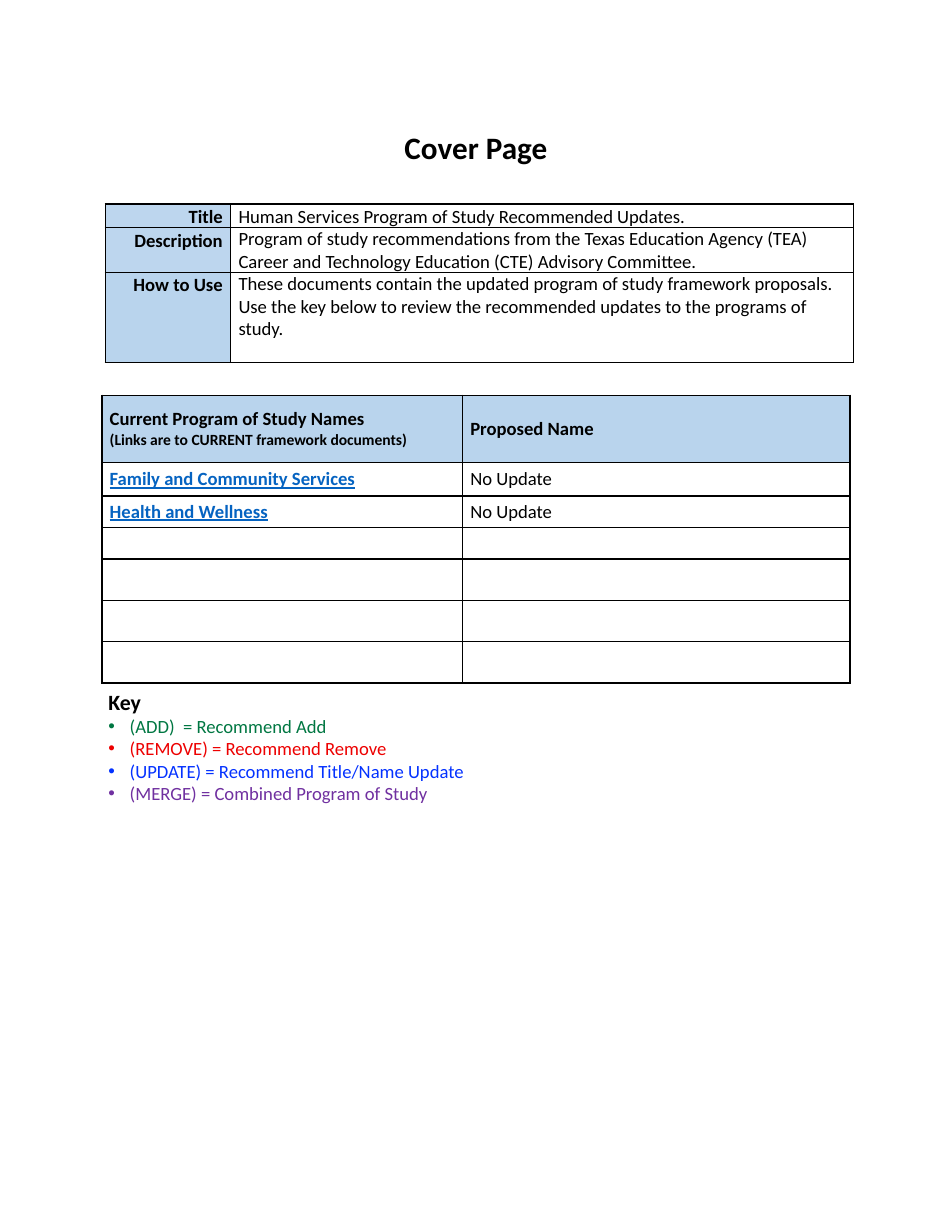
from dataclasses import dataclass
from lxml import etree
from pptx import Presentation
from pptx.dml.color import RGBColor
from pptx.enum.text import MSO_ANCHOR, PP_ALIGN
from pptx.oxml.ns import qn
from pptx.util import Inches, Pt

MID, TOP = MSO_ANCHOR.MIDDLE, MSO_ANCHOR.TOP
LEFT, RIGHT, CENTER = PP_ALIGN.LEFT, PP_ALIGN.RIGHT, PP_ALIGN.CENTER


@dataclass
class Theme:
    face: str = "Calibri"
    black: str = "000000"
    white: str = "FFFFFF"
    pale: str = "BDD6EE"
    blue: str = "B9D4ED"
    link: str = "0563C1"
    add: str = "007742"
    drop: str = "ED0000"
    edit: str = "0432FF"
    merge: str = "7030A0"
    title: int = 20
    key: int = 14
    body: int = 12
    note: int = 10


theme = Theme()


def write(para, text, size=theme.body, color=theme.black, bold=False, align=LEFT):
    para.text = text
    para.alignment = align
    font = para.font
    font.name, font.size, font.bold = theme.face, Pt(size), bold
    font.color.rgb = RGBColor.from_string(color)
    if not text:
        para._p.get_or_add_endParaRPr().set("sz", str(size * 100))


def grid(left, top, cols, rows, fills, anchor):
    frame = slide.shapes.add_table(len(rows), len(cols), Inches(left), Inches(top),
                                   Inches(sum(cols)), Inches(sum(rows)))
    table = frame.table
    table.first_row = table.horz_banding = False
    for col, width in zip(table.columns, cols):
        col.width = Inches(width)
    for row, height, pair in zip(table.rows, rows, fills):
        row.height = Inches(height)
        for cell, color in zip(row.cells, pair):
            cell.margin_left = cell.margin_right = Inches(0.07)
            cell.margin_top = cell.margin_bottom = 0
            cell.vertical_anchor = anchor
            props = cell._tc.get_or_add_tcPr()
            for side in ("lnL", "lnR", "lnT", "lnB"):
                line = etree.SubElement(props, qn("a:" + side), w=str(Pt(1)))
                paint = etree.SubElement(line, qn("a:solidFill"))
                etree.SubElement(paint, qn("a:srgbClr"), val=theme.black)
            if color:
                cell.fill.solid()
                cell.fill.fore_color.rgb = RGBColor.from_string(color)
            else:
                cell.fill.background()
    return table


deck = Presentation()
deck.slide_width, deck.slide_height = Inches(8.5), Inches(11)
slide = deck.slides.add_slide(deck.slide_layouts[6])

head = slide.shapes.add_textbox(0, Inches(1.06), Inches(8.5), Inches(0.5)).text_frame
head.word_wrap = True
head.vertical_anchor = MID
write(head.paragraphs[0], "Cover Page", theme.title, bold=True, align=CENTER)

facts = [
    ("Title", "Human Services Program of Study Recommended Updates."),
    ("Description", "Program of study recommendations from the Texas Education Agency (TEA) "
     "Career and Technology Education (CTE) Advisory Committee."),
    ("How to Use", "These documents contain the updated program of study framework proposals. "
     "Use the key below to review the recommended updates to the programs of study."),
]
fills = [(theme.pale, None), (theme.pale, None), (theme.blue, None)]
about = grid(0.94, 1.82, [1.12, 5.56], [0.21, 0.4, 0.8], fills, TOP)
for row, (label, text) in enumerate(facts):
    name, info = [about.cell(row, col).text_frame.paragraphs[0] for col in (0, 1)]
    write(name, label, bold=True, align=RIGHT)
    write(info, text)
    name.line_spacing = 1.07
about.cell(0, 1).text_frame.paragraphs[0].line_spacing = 1.07

names = ["Family and Community Services", "Health and Wellness"] + [""] * 4
fills = [(theme.blue, theme.blue)] + [(theme.white, None)] * len(names)
rows = [0.6, 0.3, 0.28, 0.28, 0.37, 0.37, 0.37]
study = grid(0.91, 3.53, [3.22, 3.46], rows, fills, MID)
first = study.cell(0, 0).text_frame
write(first.paragraphs[0], "Current Program of Study Names", bold=True)
write(first.add_paragraph(), "(Links are to CURRENT framework documents)", theme.note, bold=True)
write(study.cell(0, 1).text_frame.paragraphs[0], "Proposed Name", bold=True)
for row, name in enumerate(names, 1):
    now, new = [study.cell(row, col).text_frame.paragraphs[0] for col in (0, 1)]
    write(now, name, color=theme.link, bold=True)
    now.font.underline = True
    write(new, "No Update" if name else "")

key = slide.shapes.add_textbox(Inches(0.87), Inches(6.1), Inches(5.7), Inches(1.14)).text_frame
key.word_wrap = True
write(key.paragraphs[0], "Key", theme.key, bold=True)
marks = [
    ("(ADD)  = Recommend Add", theme.add),
    ("(REMOVE) = Recommend Remove", theme.drop),
    ("(UPDATE) = Recommend Title/Name Update", theme.edit),
    ("(MERGE) = Combined Program of Study", theme.merge),
]
for text, color in marks:
    para = key.add_paragraph()
    props = para._p.get_or_add_pPr()
    props.set("marL", str(Inches(0.19)))
    props.set("indent", str(-Inches(0.19)))
    etree.SubElement(props, qn("a:buFont"), typeface="Arial")
    etree.SubElement(props, qn("a:buChar"), char="•")
    write(para, text, color=color)

deck.save("out.pptx")
